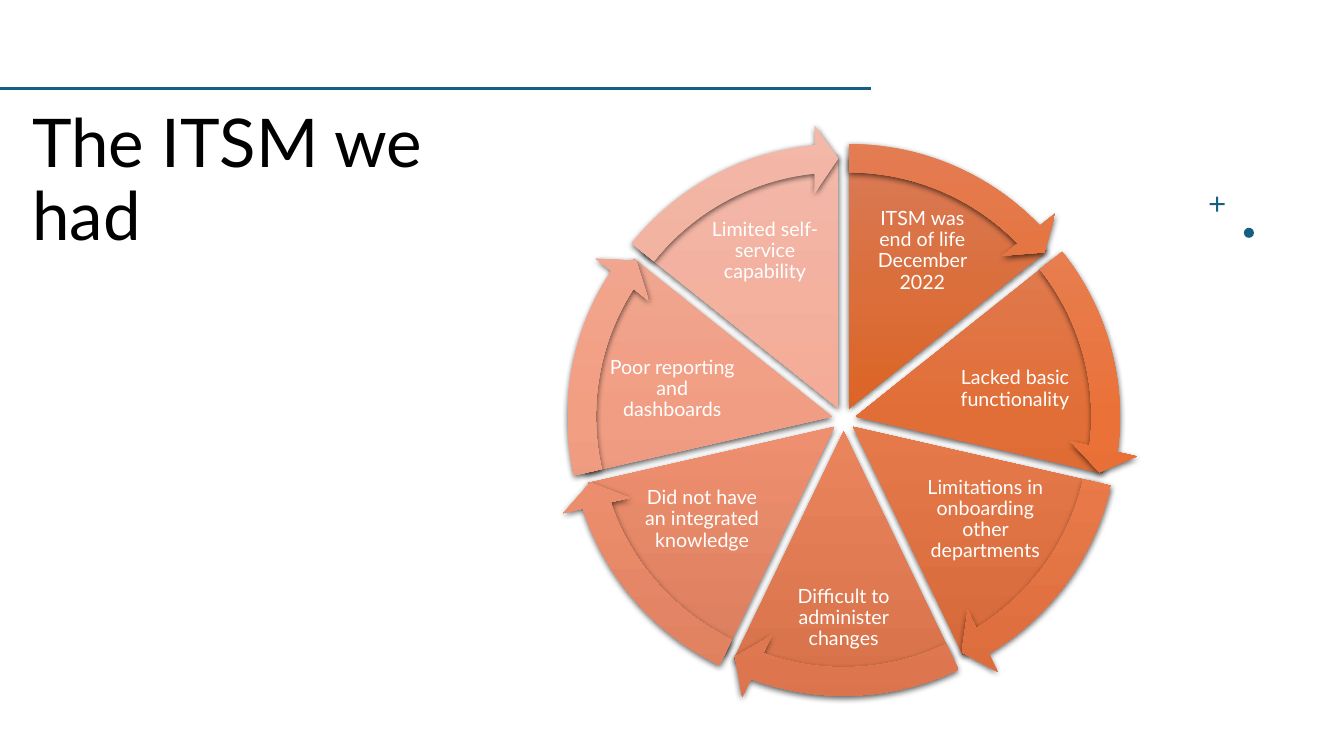
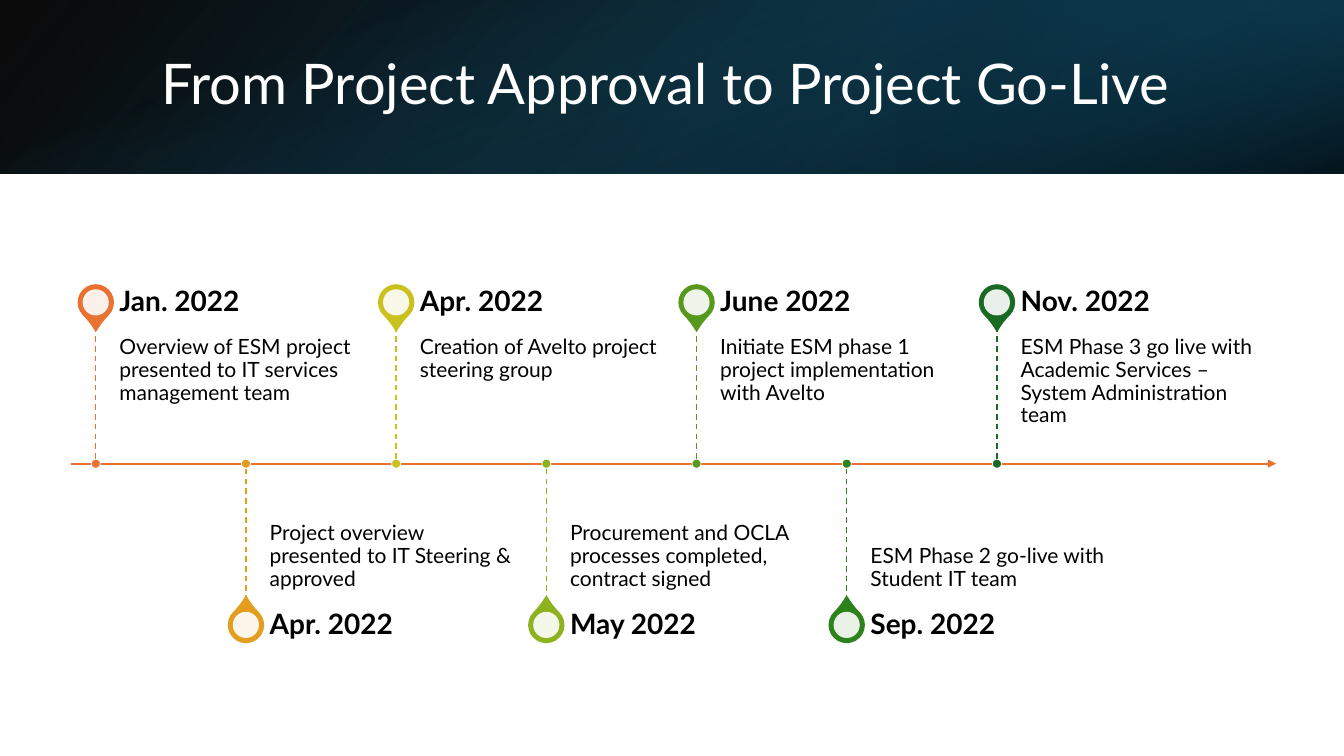
from dataclasses import dataclass
from math import cos, radians, sin

from lxml import etree
from pptx import Presentation
from pptx.dml.color import RGBColor
from pptx.enum.dml import MSO_LINE
from pptx.enum.shapes import MSO_CONNECTOR, MSO_SHAPE
from pptx.enum.text import MSO_ANCHOR, MSO_AUTO_SIZE, PP_ALIGN
from pptx.oxml.ns import qn
from pptx.util import Inches, Pt

STRAIGHT = MSO_CONNECTOR.STRAIGHT
RECT, OVAL, CROSS = MSO_SHAPE.RECTANGLE, MSO_SHAPE.OVAL, MSO_SHAPE.CROSS
PIE, ARC_ARROW, TEAR = MSO_SHAPE.PIE, MSO_SHAPE.CIRCULAR_ARROW, MSO_SHAPE.TEAR
TOP, MIDDLE, BOTTOM = MSO_ANCHOR.TOP, MSO_ANCHOR.MIDDLE, MSO_ANCHOR.BOTTOM
LEFT, CENTER = PP_ALIGN.LEFT, PP_ALIGN.CENTER
DASH = MSO_LINE.DASH

# The grid has square cells of a tenth of an inch.
COLS, ROWS = 133.33, 75
TITLE_ONLY = 5


@dataclass(frozen=True)
class Theme:
    font: str = "Lato"
    ink: str = "000000"
    paper: str = "FFFFFF"
    teal: str = "156082"
    deep_teal: str = "104862"
    night_teal: str = "0B3041"
    orange: str = "E97132"
    big_title: int = 48
    band_title: int = 40
    date: int = 20
    body: int = 15
    label: int = 14


THEME = Theme()

# Label, gradient of the slice, gradient of its arrow
PROBLEMS = [
    ("ITSM was end of life December 2022",
     ("D97A55", "DC6425", "CC5618"), ("E47E56", "E76927", "D75A19")),
    ("Lacked basic functionality",
     ("DF825E", "E16E37", "D05F28"), ("E68660", "EA7239", "D9622A")),
    ("Limitations in onboarding other departments",
     ("E38B6A", "E5794A", "D46839"), ("E98E6C", "EC7C4C", "DA6B3B")),
    ("Difficult to administer changes",
     ("E89578", "EA845C", "D7724A"), ("EC9779", "EE875E", "DB744C")),
    ("Did not have an integrated knowledge",
     ("ECA087", "EE906F", "DA7D5C"), ("EEA188", "F09271", "DD7E5D")),
    ("Poor reporting and dashboards",
     ("F0AC97", "F19D83", "DD886E"), ("F1AC98", "F29E83", "DE896E")),
    ("Limited self-service capability",
     ("F3B8A8", "F4AB97", "DF9580"), ("F3B8A8", "F4AB96", "DF9480")),
]
# Label centre from the hub, then width and height; the left half mirrors the right
LABEL_SPOTS = [(7.8, -16.7, 11.9, 9.6), (17, -3, 13.7, 8.4),
               (14.05, 9.95, 11.9, 9.3), (0, 19.7, 11.7, 8.4)]

MILESTONES = [
    ("Jan. 2022", "Overview of ESM project presented to IT services management team", "E97132"),
    ("Apr. 2022", "Project overview presented to IT Steering & approved", "E39D1F"),
    ("Apr. 2022", "Creation of Avelto project steering group", "CBC11E"),
    ("May 2022", "Procurement and OCLA processes completed, contract signed", "8EB21E"),
    ("June 2022", "Initiate ESM phase 1 project implementation with Avelto", "56991D"),
    ("Sep. 2022", "ESM Phase 2 go-live with Student IT team", "2C821B"),
    ("Nov. 2022", "ESM Phase 3 go live with Academic Services – System Administration team", "196B24"),
]


def grid(*cells):
    return [Inches(cell / 10) for cell in cells]


def around(x, y, width, height=None):
    """Left, top, width and height of a box centred on a point."""
    height = width if height is None else height
    return x - width / 2, y - height / 2, width, height


def write(frame, text, size, color=THEME.ink, bold=False, align=LEFT,
          anchor=TOP, insets=(1, 0.5, 1, 0.5)):
    frame.word_wrap = True
    frame.auto_size = MSO_AUTO_SIZE.NONE
    frame.vertical_anchor = anchor
    (frame.margin_left, frame.margin_top,
     frame.margin_right, frame.margin_bottom) = grid(*insets)
    paragraph = frame.paragraphs[0]
    paragraph.alignment = align
    paragraph.line_spacing = 0.9
    run = paragraph.add_run()
    run.text = text
    run.font.name = THEME.font
    run.font.size = Pt(size)
    run.font.bold = bold
    run.font.color.rgb = RGBColor.from_string(color)


def add_color(parent, color, opacity=100):
    node = etree.SubElement(parent, qn("a:srgbClr"), val=color)
    if opacity < 100:
        etree.SubElement(node, qn("a:alpha"), val=str(opacity * 1000))


class Deck:
    def __init__(self):
        self.file = Presentation()
        self.file.slide_width, self.file.slide_height = grid(COLS, ROWS)
        self.slide = None

    def new_slide(self):
        self.slide = self.file.slides.add_slide(self.file.slide_layouts[TITLE_ONLY])

    def title(self, text, at, **style):
        """Place the title in front of everything drawn so far."""
        title = self.slide.shapes.title
        title.left, title.top, title.width, title.height = grid(*at)
        write(title.text_frame, text, **style)
        title.element.getparent().append(title.element)

    def text(self, text, at, **style):
        write(self.slide.shapes.add_textbox(*grid(*at)).text_frame, text, **style)

    def shape(self, kind, at, fill=None, opacity=100, outline=None, weight=1.5,
              adjust=(), turn=0, flip=False):
        shape = self.slide.shapes.add_shape(kind, *grid(*at))
        shape.shadow.inherit = False
        shape.rotation = turn
        for index, value in enumerate(adjust):
            shape.adjustments[index] = value
        if flip:
            shape.element.spPr.find(qn("a:xfrm")).set("flipH", "1")
        if fill:
            shape.fill.solid()
            solid = shape.element.spPr.find(qn("a:solidFill"))
            for child in list(solid):
                solid.remove(child)
            add_color(solid, fill, opacity)
        if outline:
            shape.line.color.rgb = RGBColor.from_string(outline)
            shape.line.width = Pt(weight)
        else:
            shape.line.fill.background()
        return shape

    def gradient(self, kind, at, stops, angle, **look):
        """Draw a shape with (position, colour, opacity) stops and a clockwise angle."""
        shape = self.shape(kind, at, **look)
        shape.fill.gradient()
        shape.fill.gradient_angle = 360 - angle
        stop_list = shape.element.spPr.find(qn("a:gradFill")).find(qn("a:gsLst"))
        for child in list(stop_list):
            stop_list.remove(child)
        for position, color, opacity in stops:
            stop = etree.SubElement(stop_list, qn("a:gs"), pos=str(position * 1000))
            add_color(stop, color, opacity)
        return shape

    def raised(self, kind, at, colors, adjust):
        """Draw a shape shaded from top to bottom that casts a soft shadow."""
        stops = [(50 * i, color, 100) for i, color in enumerate(colors)]
        shape = self.gradient(kind, at, stops, 90, adjust=adjust)
        shadow = etree.SubElement(
            shape.element.spPr.find(qn("a:effectLst")), qn("a:outerShdw"),
            blurRad=str(Pt(4.5)), dist=str(Pt(1.5)), dir="5400000", rotWithShape="0")
        add_color(shadow, THEME.ink, 63)

    def line(self, start, end, color, weight, dash=None, arrow=False):
        line = self.slide.shapes.add_connector(STRAIGHT, *grid(*start, *end))
        line.line.color.rgb = RGBColor.from_string(color)
        line.line.width = Pt(weight)
        if dash:
            line.line.dash_style = dash
        properties = line.element.spPr
        if arrow:
            etree.SubElement(properties.find(qn("a:ln")), qn("a:tailEnd"), type="triangle")
        etree.SubElement(properties, qn("a:effectLst"))


def problem_wheel(deck):
    hub_x, hub_y, spread = 83.7, 41.6, 1.2
    step, head = 360 / len(PROBLEMS), 5.46
    unit = 0.6  # adjustment value of one degree
    slices = []
    for i, (label, slice_colors, arrow_colors) in enumerate(PROBLEMS):
        start = (270 + i * step) % 360
        end = (start + step) % 360
        middle = radians(start + step / 2)
        center = hub_x + spread * cos(middle), hub_y + spread * sin(middle)
        slices.append((center, start, end, arrow_colors))
        deck.raised(PIE, around(*center, 50.2), slice_colors, (start * unit, end * unit))

        mirror = len(PROBLEMS) - 1 - i
        dx, dy, width, height = LABEL_SPOTS[min(i, mirror)]
        side = 1 if i <= mirror else -1
        deck.text(label, around(hub_x + side * dx, hub_y + dy, width, height),
                  size=THEME.label, color=THEME.paper, align=CENTER, anchor=MIDDLE,
                  insets=(0.2,) * 4)
    for center, start, end, colors in slices:
        tip = (end - head) % 360
        deck.raised(ARC_ARROW, around(*center, 56.4), colors,
                    (0.05, head * unit, tip * unit, start * unit, 0.06))


def title_band(deck, height):
    deck.gradient(RECT, (0, 0, COLS, height),
                  [(0, THEME.ink, 96), (100, THEME.deep_teal, 100)], 140, flip=True)
    deck.gradient(RECT, (COLS * 2 / 3, 0, COLS / 3, height),
                  [(19, THEME.night_teal, 68), (100, THEME.teal, 79)], 320,
                  turn=180, flip=True)
    deck.gradient(RECT, around(COLS / 2, height / 2, height, COLS),
                  [(23, THEME.teal, 0), (99, THEME.ink, 74)], 340, turn=90)


def timeline(deck):
    axis, first, step = 46, 9.5, 14.9
    stem, date_height, width = 13.6, 4.8, 24.9
    deck.line((7, axis), (126.6, axis), THEME.orange, 1.5, arrow=True)
    for i, (date, event, color) in enumerate(MILESTONES):
        x = first + i * step
        above = i % 2 == 0
        side = -1 if above else 1
        stem_end = axis + side * stem
        pin = stem_end + side * date_height / 2
        deck.shape(TEAR, around(x, pin, 3.4), color, outline=color,
                   adjust=(1.15,), turn=135 if above else 315)
        deck.shape(OVAL, around(x, pin, 2.6), THEME.paper, opacity=90)
        deck.text(event, (x + 2.35, min(axis, stem_end), width, stem), size=THEME.body,
                  anchor=TOP if above else BOTTOM,
                  insets=(0, 1, 1, 1.6) if above else (0, 1.6, 0, 1))
        deck.text(date, (x + 2.35, pin - date_height / 2, width, date_height),
                  size=THEME.date, bold=True, anchor=MIDDLE, insets=(0, 0, 1.4, 0))
        deck.line((x, stem_end), (x, axis), color, 1, dash=DASH)
        deck.shape(OVAL, around(x, axis, 0.9), color, outline=THEME.paper, weight=0.5)


def main():
    deck = Deck()

    deck.new_slide()
    deck.title("The ITSM we had", (2.2, 11.8, 48.6, 14), size=THEME.big_title, anchor=BOTTOM)
    deck.line((0, 8.8), (86.4, 8.8), THEME.teal, 2)
    problem_wheel(deck)
    deck.shape(CROSS, (120, 19.5, 1.5, 1.5), THEME.teal, adjust=(0.43,))
    deck.shape(OVAL, (123.4, 22.6, 1, 1), THEME.teal)

    deck.new_slide()
    title_band(deck, 17.2)
    deck.title("From Project Approval to Project Go-Live", (15, 3.8, 109.8, 9.6),
               size=THEME.band_title, color=THEME.paper, anchor=MIDDLE)
    timeline(deck)

    deck.file.save("out.pptx")


if __name__ == "__main__":
    main()
